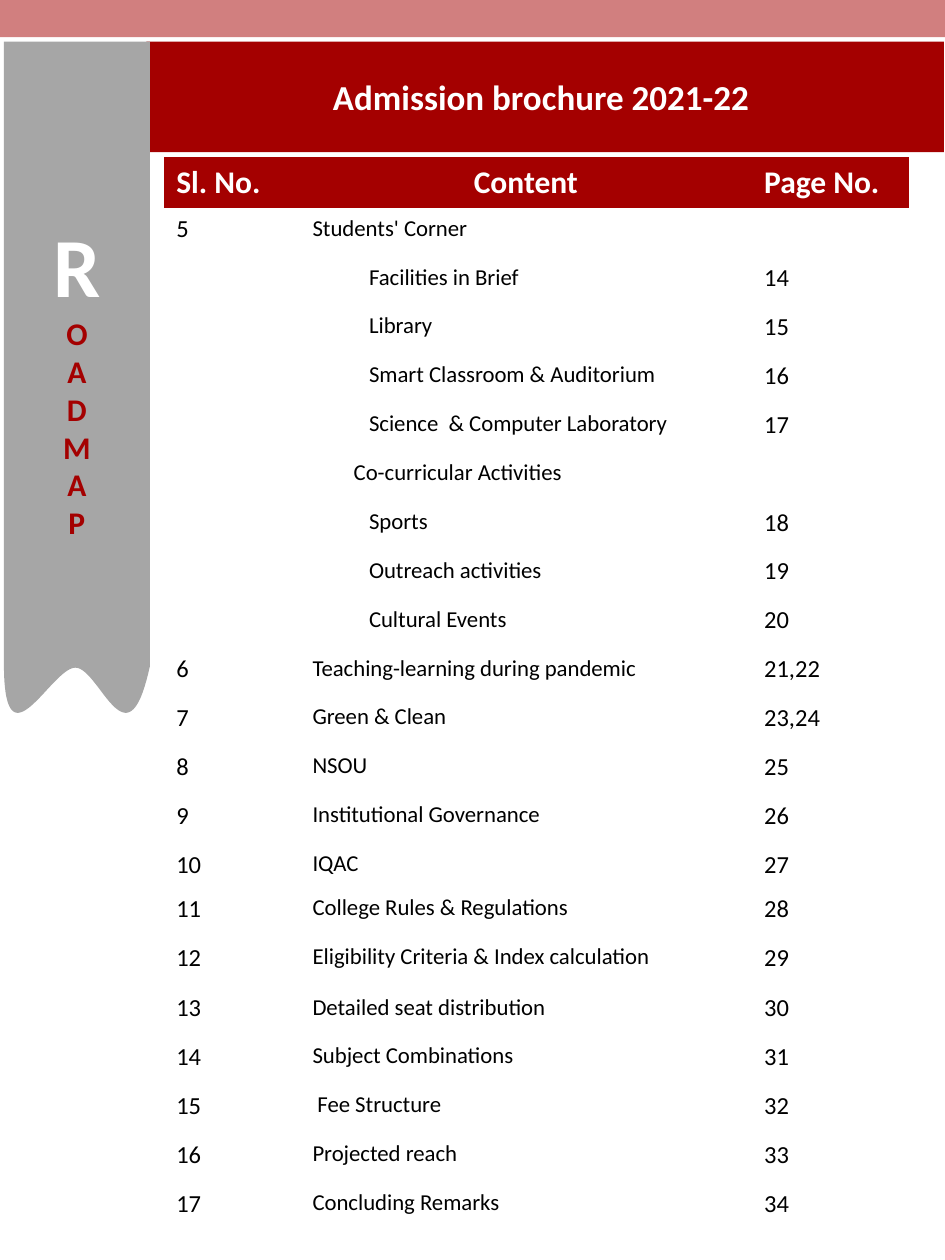
"""Build the roadmap contents page of the admission brochure."""
from dataclasses import dataclass

from lxml import etree
from pptx import Presentation, util as u
from pptx.dml.color import RGBColor
from pptx.enum import shapes, text
from pptx.oxml.ns import qn


@dataclass(frozen=True)
class Theme:
    font: str = "Calibri"
    red: RGBColor = RGBColor(0xA4, 0x00, 0x00)
    grey: RGBColor = RGBColor(0xA6, 0xA6, 0xA6)
    white: RGBColor = RGBColor(0xFF, 0xFF, 0xFF)
    black: RGBColor = RGBColor(0x00, 0x00, 0x00)
    initial: int = 48
    title: int = 20
    head: int = 18
    number: int = 14
    body: int = 13


def add_run(p, words, size, color, bold=False):
    r = p.add_run()
    r.text = words
    r.font.name = theme.font
    r.font.size = u.Pt(size)
    r.font.bold = bold
    r.font.color.rgb = color


def paint(sp, color):
    sp.shadow.inherit = False
    sp.fill.solid()
    sp.fill.fore_color.rgb = color
    sp.line.fill.background()


theme = Theme()
prs = Presentation()
prs.slide_width, prs.slide_height = u.Cm(19.05), u.Cm(25.4)
s = prs.slides.add_slide(prs.slide_layouts[6])

band = s.shapes.add_shape(shapes.MSO_SHAPE.RECTANGLE, u.Cm(-0.05), u.Cm(-0.05), u.Cm(19.1), u.Cm(0.8))
paint(band, theme.red)
color = band.fill._xPr.find(qn("a:solidFill"))[0]
etree.SubElement(color, qn("a:alpha"), val="50000")

banner = s.shapes.add_shape(shapes.MSO_SHAPE.RECTANGLE, u.Cm(2.95), u.Cm(0.84), u.Cm(16.08), u.Cm(2.23))
paint(banner, theme.red)
tf = banner.text_frame
tf.vertical_anchor = text.MSO_ANCHOR.MIDDLE
p = tf.paragraphs[0]
p.alignment = text.PP_ALIGN.CENTER
add_run(p, "Admission brochure 2021-22 ", theme.title, theme.white, True)

curves = [
    ((3.02, 13.44), (2.57, 15.52), (2.01, 13.46), (1.52, 13.46)),
    ((1.52, 13.46), (1.04, 13.46), (0.1, 15.52), (0.08, 13.44)),
]
steps = 40
outline = [(3.02, 0.84), (3.02, 13.44)]
for a, b, c, d in curves:
    for i in range(1, steps + 1):
        t = i / steps
        k = ((1 - t) ** 3, 3 * t * (1 - t) ** 2, 3 * t * t * (1 - t), t ** 3)
        outline.append(tuple(sum(w * q[axis] for w, q in zip(k, (a, b, c, d))) for axis in (0, 1)))
builder = s.shapes.build_freeform(u.Cm(0.08), u.Cm(0.84))
builder.add_line_segments([(u.Cm(x), u.Cm(y)) for x, y in outline], close=True)
ribbon = builder.convert_to_shape()
paint(ribbon, theme.grey)
tf = ribbon.text_frame
tf.vertical_anchor = text.MSO_ANCHOR.MIDDLE
tf._txBody.bodyPr.set("vert", "wordArtVert")
p = tf.paragraphs[0]
p.alignment = text.PP_ALIGN.CENTER
add_run(p, "R", theme.initial, theme.white, True)
add_run(p, "OADMAP", theme.head, theme.red, True)

item, group, slight = 1.14, 0.83, 0.1
rows = [
    ("Sl. No.", "Content", "Page No.", 0),
    ("5", "Students' Corner", "", 0),
    ("", "Facilities in Brief", "14", item),
    ("", "Library", "15", item),
    ("", "Smart Classroom & Auditorium", "16", item),
    ("", "Science  & Computer Laboratory", "17", item),
    ("", "Co-curricular Activities", "", group),
    ("", "Sports", "18", item),
    ("", "Outreach activities", "19", item),
    ("", "Cultural Events", "20", item),
    ("6", "Teaching-learning during pandemic", "21,22", 0),
    ("7", "Green & Clean", "23,24", 0),
    ("8", "NSOU", "25", 0),
    ("9", "Institutional Governance", "26", 0),
    ("10", "IQAC", "27", 0),
    ("11", "College Rules & Regulations", "28", 0),
    ("12", "Eligibility Criteria & Index calculation", "29", 0),
    ("13", "Detailed seat distribution", "30", 0),
    ("14", "Subject Combinations", "31", 0),
    ("15", "Fee Structure", "32", slight),
    ("16", "Projected reach", "33", 0),
    ("17", "Concluding Remarks", "34", 0),
]
heights = {0: u.Cm(1.03), 14: u.Cm(0.89), 16: u.Cm(1.02)}
regular = u.Cm(18.72) // 19
frame = s.shapes.add_table(len(rows), 3, u.Cm(3.3), u.Cm(3.17), u.Cm(15.03), u.Cm(21.66))
frame._element.xpath(".//a:tableStyleId")[0].text = "{2D5ABB26-0587-4C30-8999-92F81FD0307C}"
table = frame.table
table.horz_banding = False
for column, width in zip(table.columns, (2.75, 9.1, 3.18)):
    column.width = u.Cm(width)
for i, (*words, indent) in enumerate(rows):
    table.rows[i].height = heights.get(i, regular)
    for j, word in enumerate(words):
        cell = table.cell(i, j)
        p = cell.text_frame.paragraphs[0]
        if i == 0:
            cell.fill.solid()
            cell.fill.fore_color.rgb = theme.red
            p.alignment = text.PP_ALIGN.CENTER if j == 1 else text.PP_ALIGN.LEFT
            add_run(p, word, theme.head, theme.white, True)
            continue
        cell.fill.background()
        if not word:
            cell.margin_top = cell.margin_bottom = 0
            continue
        if j == 1:
            cell.margin_left = u.Cm(0.25 + indent)
        add_run(p, word, theme.body if j == 1 else theme.number, theme.black)

prs.save("out.pptx")
